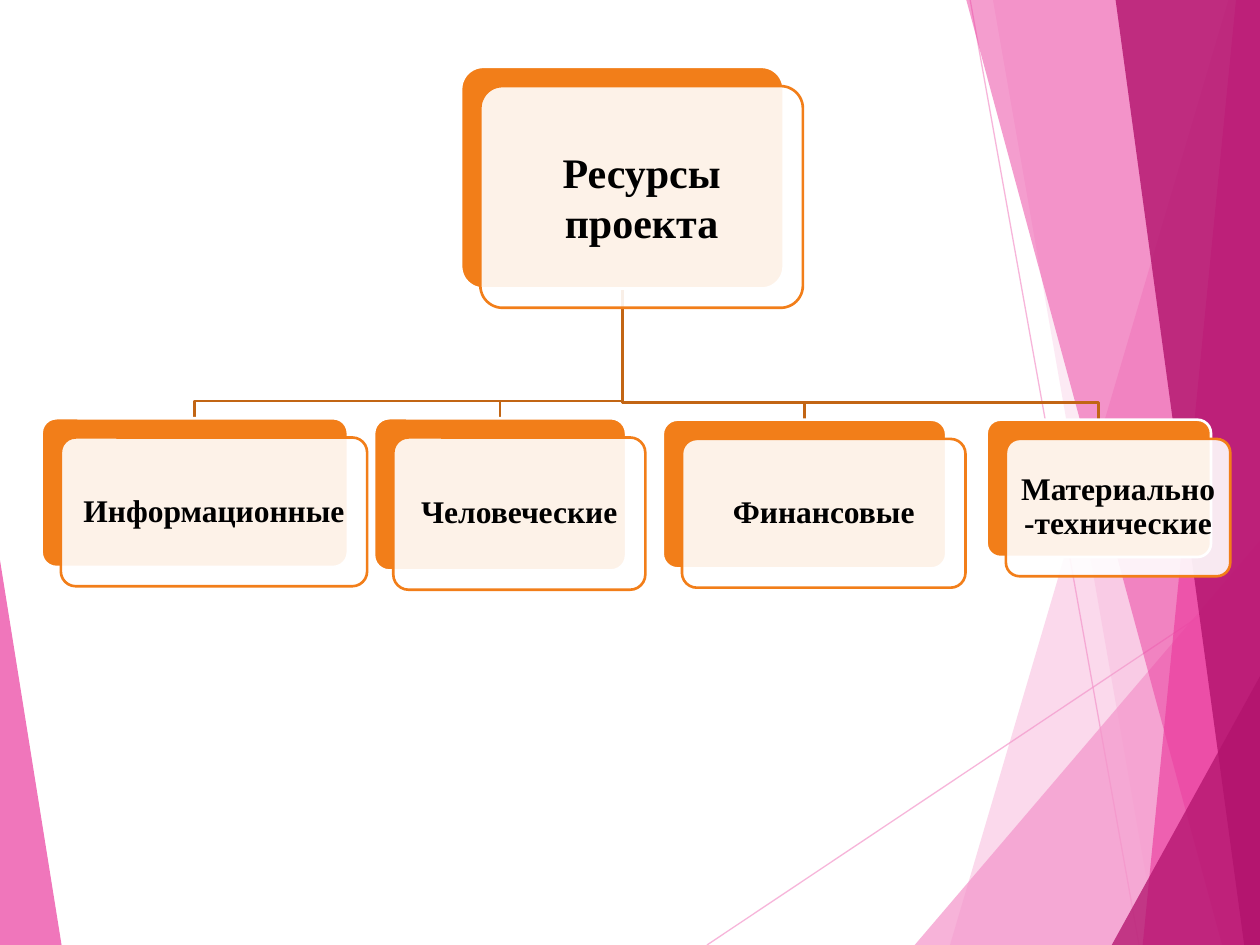
from dataclasses import dataclass

from lxml import etree
from pptx import Presentation
from pptx.dml.color import RGBColor
from pptx.enum import shapes as kinds, text as txt
from pptx.oxml.ns import qn
from pptx.util import Pt

PINK, MAGENTA, PLUM = "F496CB", "EB3D9F", "B2136D"
ORANGE, BROWN, WHITE = "F27E19", "C26514", "FFFFFF"
WIDTH, HEIGHT = 720, 540
OFFSET = 11
BRANCH_DROP = 9.7


@dataclass
class Facet:
    points: list
    color: str
    opacity: int


@dataclass
class Ray:
    start: tuple
    end: tuple


@dataclass
class Card:
    label: str
    left: float
    top: float
    width: float
    height: float
    size: float = 18
    inset: float = 5
    spacing: float = 0.9

    @property
    def center(self) -> float:
        return self.left + self.width / 2


RAYS = [Ray((404, HEIGHT), (WIDTH, 329)), Ray((554.4, 0), (650.9, HEIGHT))]

FACETS = [
    Facet([(702, 0), (542.9, 540), (720, 540), (720, 0)], PINK, 36),
    Facet([(567.4, 0), (661.7, 540), (720, 540), (720, 0)], PINK, 20),
    Facet([(522.7, 540), (720, 308.9), (720, 540)], PINK, 72),
    Facet([(552.2, 0), (698.4, 540), (720, 540), (720, 0)], MAGENTA, 50),
    Facet([(706.3, 0), (653, 540), (720, 540), (720, 0)], MAGENTA, 66),
    Facet([(637.5, 0), (711, 540), (720, 540), (720, 0)], PLUM, 80),
    Facet([(635.3, 540), (720, 386.5), (720, 540)], PLUM, 76),
    Facet([(0, 320), (35.2, 540), (0, 540)], MAGENTA, 70),
]

ROOT = Card("Ресурсы проекта", 263.5, 38.2, 184.3, 126.7,
            size=24, inset=7.2, spacing=1.0)
RESOURCES = [
    Card("Информационные", 23.8, 239, 175, 85),
    Card("Человеческие", 213.8, 239, 144, 87),
    Card("Финансовые", 378.7, 239.8, 162, 85),
    Card("Материально-технические", 563.8, 239.8, 128.2, 78.5),
]


def paint(fill, color: str, opacity: int = 100) -> None:
    fill.solid()
    fill.fore_color.rgb = RGBColor.from_string(color)
    if opacity < 100:
        for tint in fill._xPr.iter(qn("a:srgbClr")):
            alpha = etree.SubElement(tint, qn("a:alpha"))
            alpha.set("val", str(opacity * 1000))


def stroke(line, color: str, width: float, opacity: int = 100) -> None:
    line.width = Pt(width)
    paint(line.fill, color, opacity)


def draw_ray(slide, ray: Ray) -> None:
    ends = [Pt(v) for v in ray.start + ray.end]
    connector = slide.shapes.add_connector(kinds.MSO_CONNECTOR.STRAIGHT, *ends)
    stroke(connector.line, PINK, 0.75, 70)
    etree.SubElement(connector._element.spPr, qn("a:effectLst"))


def draw_path(slide, points: list, close: bool):
    start, *rest = [(Pt(x), Pt(y)) for x, y in points]
    builder = slide.shapes.build_freeform(*start)
    builder.add_line_segments(rest, close=close)
    path = builder.convert_to_shape()
    path.shadow.inherit = False
    return path


def draw_facet(slide, facet: Facet) -> None:
    shape = draw_path(slide, facet.points, close=True)
    paint(shape.fill, facet.color, facet.opacity)
    shape.line.fill.background()


def draw_branch(slide, parent: Card, child: Card) -> None:
    bend = child.top - BRANCH_DROP
    branch = draw_path(slide, [
        (parent.center, parent.top + parent.height), (parent.center, bend),
        (child.center, bend), (child.center, child.top),
    ], close=False)
    branch.fill.background()
    stroke(branch.line, BROWN, 1.5)


def write(shape, content: str, *, size: float, inset: float, spacing: float,
          font: str = "Times New Roman", color: str = "000000",
          bold: bool = True) -> None:
    frame = shape.text_frame
    frame.word_wrap = True
    frame.vertical_anchor = txt.MSO_ANCHOR.MIDDLE
    frame.margin_left = frame.margin_right = Pt(inset)
    frame.margin_top = frame.margin_bottom = Pt(inset)
    paragraph = frame.paragraphs[0]
    paragraph.alignment = txt.PP_ALIGN.CENTER
    paragraph.line_spacing = spacing
    run = paragraph.add_run()
    run.text = content
    run.font.name, run.font.size, run.font.bold = font, Pt(size), bold
    run.font.color.rgb = RGBColor.from_string(color)


def draw_panel(slide, card: Card, shift: float, fill: str, line: str,
               opacity: int = 100):
    panel = slide.shapes.add_shape(
        kinds.MSO_SHAPE.ROUNDED_RECTANGLE, Pt(card.left + shift),
        Pt(card.top + shift), Pt(card.width), Pt(card.height))
    panel.adjustments[0] = 0.1
    panel.shadow.inherit = False
    paint(panel.fill, fill, opacity)
    stroke(panel.line, line, 1.5)
    return panel


def draw_card(slide, card: Card) -> None:
    draw_panel(slide, card, 0, ORANGE, WHITE)
    front = draw_panel(slide, card, OFFSET, WHITE, ORANGE, opacity=90)
    write(front, card.label, size=card.size, inset=card.inset,
          spacing=card.spacing)


def main() -> None:
    deck = Presentation()
    deck.slide_width, deck.slide_height = Pt(WIDTH), Pt(HEIGHT)
    slide = deck.slides.add_slide(deck.slide_layouts[6])
    for ray in RAYS:
        draw_ray(slide, ray)
    for facet in FACETS:
        draw_facet(slide, facet)
    for resource in reversed(RESOURCES):
        draw_branch(slide, ROOT, resource)
    for card in [ROOT, *RESOURCES]:
        draw_card(slide, card)
    deck.save("out.pptx")


if __name__ == "__main__":
    main()
